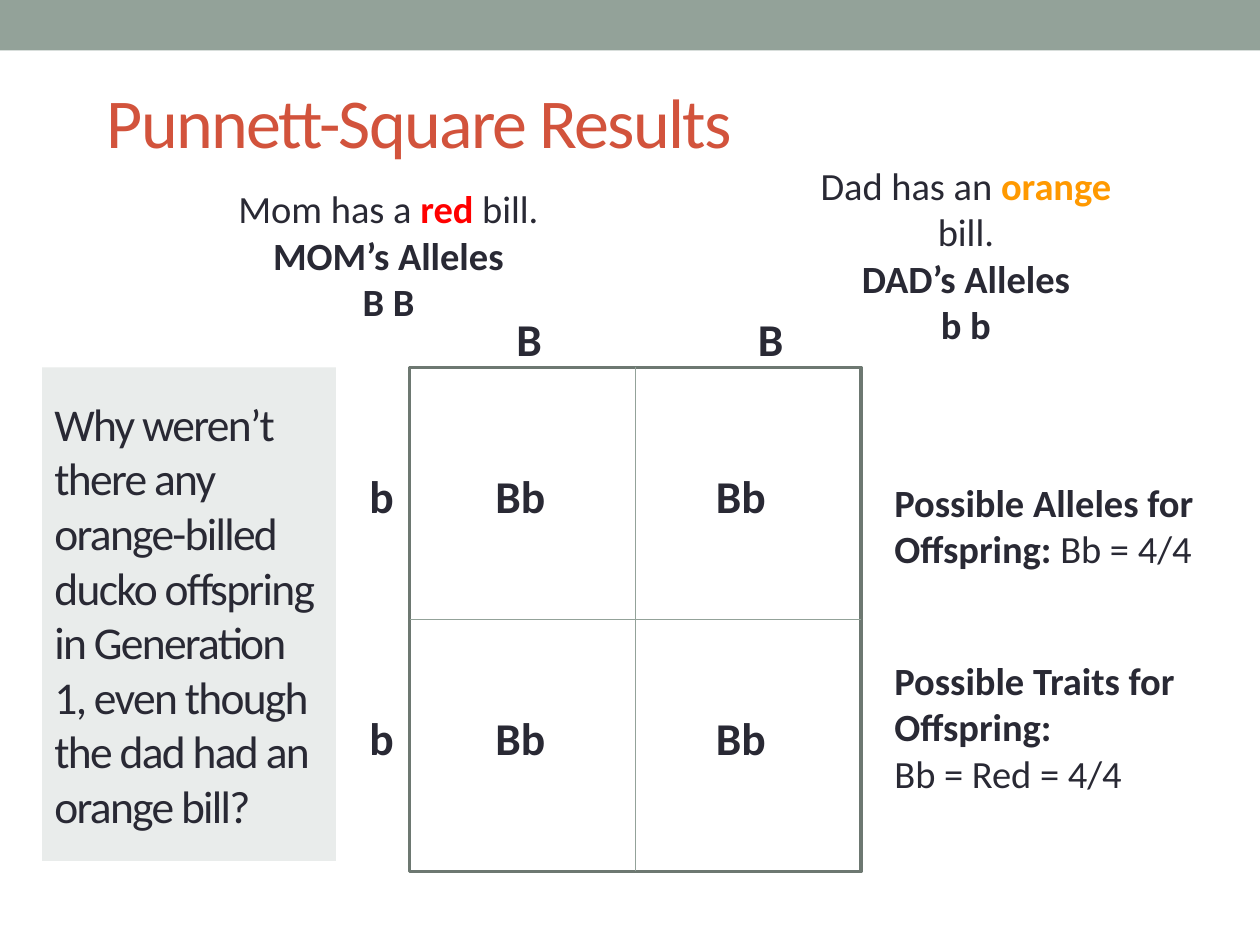
from lxml.etree import SubElement
from pptx import Presentation
from pptx.dml.color import RGBColor
from pptx.enum.shapes import MSO_CONNECTOR, MSO_SHAPE
from pptx.enum.text import MSO_ANCHOR, PP_ALIGN
from pptx.oxml.ns import qn
from pptx.util import Inches, Pt

SAGE = RGBColor(0x93, 0xA2, 0x99)
PALE_SAGE = RGBColor(0xE9, 0xEC, 0xEB)
DARK_SAGE = RGBColor(0x6D, 0x78, 0x71)
INK = RGBColor(0x29, 0x29, 0x34)
RUST = RGBColor(0xD2, 0x53, 0x3C)
RED = RGBColor(0xFF, 0x00, 0x00)
ORANGE = RGBColor(0xFF, 0x99, 0x00)

deck = Presentation()
deck.slide_width = Inches(10)
deck.slide_height = Inches(7.5)
slide = deck.slides.add_slide(deck.slide_layouts[6])
unit = deck.slide_width / 120


def grid(*steps):
    return [round(step * unit) for step in steps]


def add_text(place, paragraphs, size, color=INK, anchor=MSO_ANCHOR.TOP,
             align=PP_ALIGN.LEFT, spacing=0):
    box = slide.shapes.add_textbox(*grid(*place))
    frame = box.text_frame
    frame.word_wrap = True
    frame.vertical_anchor = anchor
    for index, runs in enumerate(paragraphs):
        para = frame.paragraphs[0] if index == 0 else frame.add_paragraph()
        para.alignment = align
        para.font.name = "Calibri"
        para.font.size = Pt(size)
        para.font.color.rgb = color
        for text, bold, tint in runs:
            span = para.add_run()
            span.text = text
            span.font.bold = bold
            if tint:
                span.font.color.rgb = tint
            if spacing:
                span.font._element.set("spc", str(spacing))
    return box


banner = slide.shapes.add_shape(MSO_SHAPE.RECTANGLE, *grid(0, 0, 120, 4.8))
banner.shadow.inherit = False
banner.fill.solid()
banner.fill.fore_color.rgb = SAGE
banner.line.fill.background()

question = add_text(
    (4, 35, 28, 47),
    [[("Why weren’t there any orange-billed ducko offspring in Generation 1, "
       "even though the dad had an orange bill?", False, None)]],
    26, anchor=MSO_ANCHOR.MIDDLE, spacing=-100)
question.fill.solid()
question.fill.fore_color.rgb = PALE_SAGE

left, top, width, height = 39, 35, 43, 48
square = slide.shapes.add_shape(MSO_SHAPE.RECTANGLE, *grid(left, top, width, height))
square.shadow.inherit = False
square.fill.background()
square.line.color.rgb = DARK_SAGE
square.line.width = Pt(2.08)

middle_x, middle_y = left + width / 2, top + height / 2
for ends in ((middle_x, top, middle_x, top + height),
             (left, middle_y, left + width, middle_y)):
    divider = slide.shapes.add_connector(MSO_CONNECTOR.STRAIGHT, *grid(*ends))
    divider.line.color.rgb = SAGE
    divider.line.width = Pt(0.75)
    SubElement(divider._element.spPr, qn("a:effectLst"))

for column in (48, 71):
    add_text((column, 29, 8, 6.5), [[("B", True, None)]], 26)
for row in (44, 67):
    for column, genes in ((34, "b"), (46, "Bb"), (67, "Bb")):
        add_text((column, row, 8, 6.5), [[(genes, True, None)]], 26)

add_text((84, 45, 34, 10),
         [[("Possible Alleles for Offspring: ", True, None), ("Bb = 4/4", False, None)]], 22)
add_text((84, 62, 33, 15),
         [[("Possible Traits for Offspring:", True, None)],
          [("Bb = Red = 4/4", False, None)]], 22)

add_text((9, 5, 104, 13), [[("Punnett-Square Results", False, None)]], 40,
         color=RUST, anchor=MSO_ANCHOR.MIDDLE, spacing=-100)

parents = (
    (19, "Mom has a ", "red", RED, "MOM’s Alleles", "B B"),
    (74, "Dad has an ", "orange", ORANGE, "DAD’s Alleles", "b b"),
)
for column, opening, bill, tint, heading, alleles in parents:
    add_text((column, 17, 36, 14.5),
             [[(opening, False, None), (bill, True, tint), (" bill.", False, None)],
              [(heading, True, None)],
              [(alleles, True, None)]],
             22, anchor=MSO_ANCHOR.MIDDLE, align=PP_ALIGN.CENTER)

deck.save("out.pptx")
